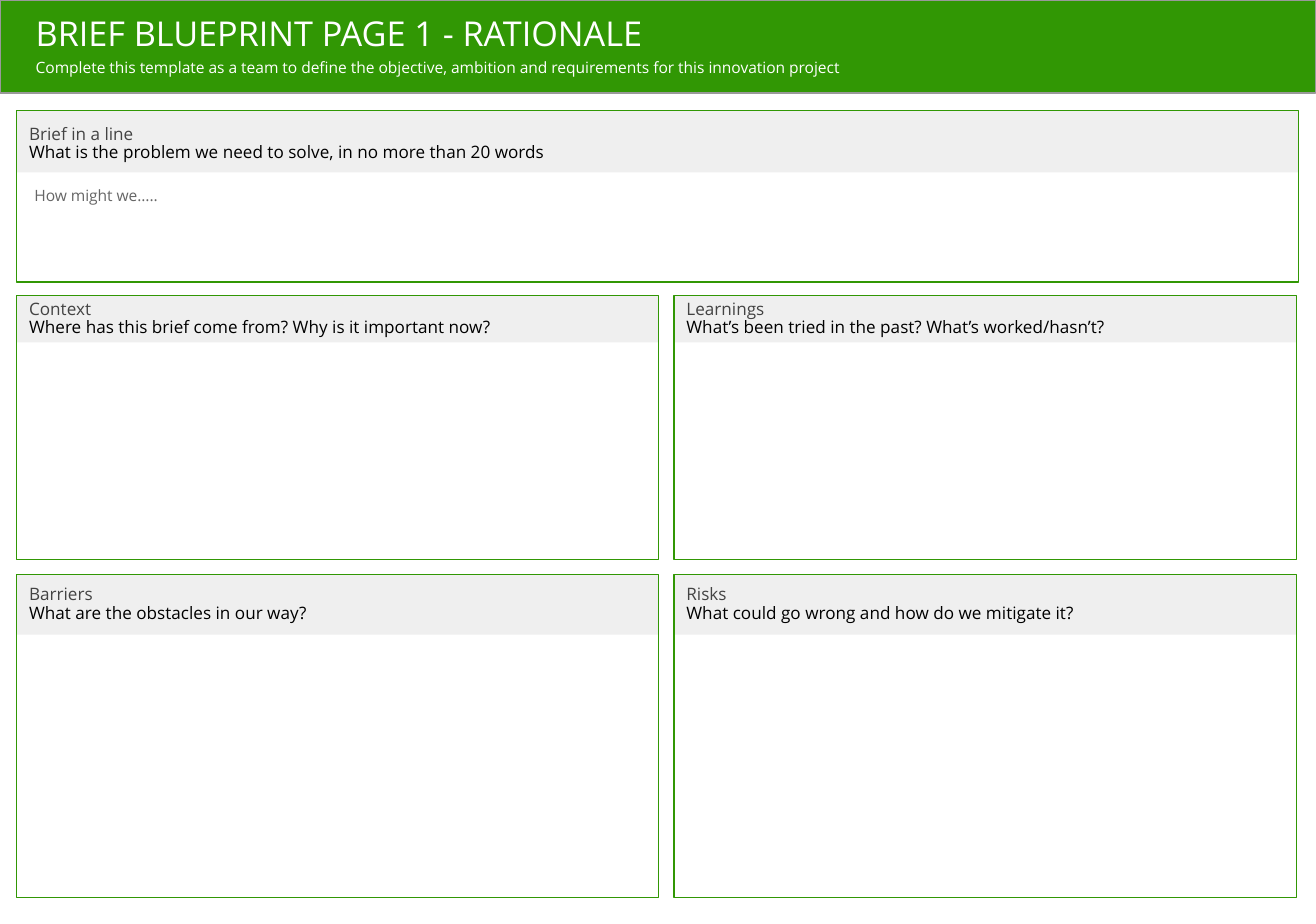
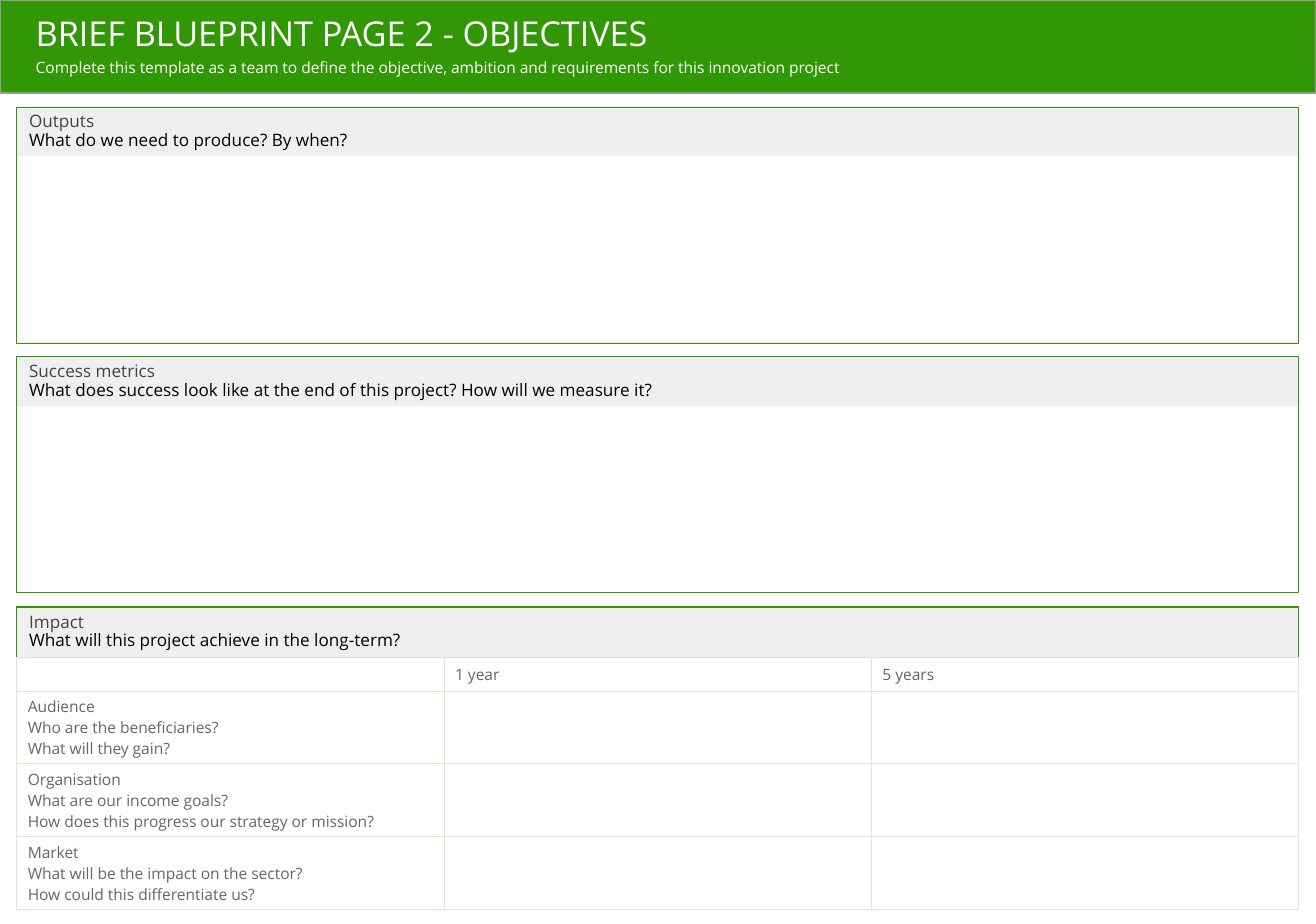
import dataclasses

import pptx
import pptx.dml.color
import pptx.enum.shapes
import pptx.enum.text
import pptx.oxml
import pptx.oxml.ns
import pptx.util

Cm = pptx.util.Cm
Pt = pptx.util.Pt
MIDDLE = pptx.enum.text.MSO_ANCHOR.MIDDLE
TOP = pptx.enum.text.MSO_ANCHOR.TOP


@dataclasses.dataclass(frozen=True)
class Theme:
    font: str = "Open Sans"
    green: str = "319704"
    pale_green: str = "D9EAD3"
    band_edge: str = "999999"
    heading_fill: str = "EFEFEF"
    white: str = "FFFFFF"
    topic: str = "434343"
    question: str = "000000"
    body: str = "666666"
    title_size: float = 22
    heading_size: float = 11
    body_size: float = 10
    line_width: float = 0.75


def rgb(value):
    return pptx.dml.color.RGBColor.from_string(value)


def write(frame, text, *, font, size, color, spacing=1.0):
    paragraph = frame.paragraphs[0]
    if paragraph.runs:
        paragraph = frame.add_paragraph()
    paragraph.alignment = pptx.enum.text.PP_ALIGN.LEFT
    paragraph.line_spacing = spacing
    run = paragraph.add_run()
    run.text = text
    run.font.name = font
    run.font.size = Pt(size)
    run.font.color.rgb = rgb(color)


class Blueprint:
    page_width, page_height = 29.85, 20.96
    band_height = 2.11
    left, full_width = 0.38, 29.08
    inset = 0.28
    subtitle = ("Complete this template as a team to define the objective, "
                "ambition and requirements for this innovation project")

    def __init__(self, theme):
        self.theme = theme
        self.deck = pptx.Presentation()
        self.deck.slide_width = Cm(self.page_width)
        self.deck.slide_height = Cm(self.page_height)
        self.slide = None

    def page(self, title):
        theme = self.theme
        self.slide = self.deck.slides.add_slide(self.deck.slide_layouts[6])
        self.box(0, 0, self.page_width, self.band_height,
                 fill=theme.green, line=theme.band_edge)
        frame = self.text_area(0.53, 0, 20.88, 2.1, self.inset)
        write(frame, title, font=theme.font, size=theme.title_size, color=theme.white)
        write(frame, self.subtitle, font=theme.font, size=theme.body_size,
              color=theme.white, spacing=1.25)

    def box(self, left, top, width, height, fill=None, line=None):
        box = self.slide.shapes.add_shape(
            pptx.enum.shapes.MSO_SHAPE.RECTANGLE,
            Cm(left), Cm(top), Cm(width), Cm(height))
        box.shadow.inherit = False
        if fill:
            box.fill.solid()
            box.fill.fore_color.rgb = rgb(fill)
        else:
            box.fill.background()
        if line:
            box.line.color.rgb = rgb(line)
            box.line.width = Pt(self.theme.line_width)
        else:
            box.line.fill.background()
        return box

    def frame_layout(self, frame, side, top, anchor):
        frame.word_wrap = True
        frame.margin_left = frame.margin_right = Cm(side)
        frame.margin_top = Cm(top)
        frame.margin_bottom = 0
        frame.vertical_anchor = anchor
        return frame

    def text_area(self, left, top, width, height, inset):
        area = self.slide.shapes.add_textbox(Cm(left), Cm(top), Cm(width), Cm(height))
        return self.frame_layout(area.text_frame, inset, inset, TOP)

    def panel(self, topic, question, left, top, width, height, heading_height,
              heading_inset=0):
        theme = self.theme
        heading = self.box(left, top, width, heading_height, fill=theme.heading_fill)
        frame = self.frame_layout(heading.text_frame, self.inset, heading_inset, MIDDLE)
        for text, color in ((topic, theme.topic), (question, theme.question)):
            write(frame, text, font=theme.font, size=theme.heading_size,
                  color=color, spacing=0.9)
        self.box(left, top, width, height, line=theme.green)

    def prompt(self, text, left, top, width, height):
        frame = self.text_area(left, top, width, height, 0.25)
        write(frame, text, font=self.theme.font, size=self.theme.body_size,
              color=self.theme.body)

    def cell_borders(self, cell):
        properties = cell._tc.get_or_add_tcPr()
        for position, side in enumerate(("lnL", "lnR", "lnT", "lnB")):
            border = pptx.oxml.parse_xml(
                f'<a:{side} {pptx.oxml.ns.nsdecls("a")} '
                f'w="{int(Pt(self.theme.line_width))}"><a:solidFill>'
                f'<a:srgbClr val="{self.theme.pale_green}"/>'
                f'</a:solidFill></a:{side}>')
            properties.insert(position, border)

    def table(self, rows, top, row_heights):
        columns = len(rows[0])
        grid = self.slide.shapes.add_table(
            len(rows), columns, Cm(self.left), Cm(top),
            Cm(self.full_width), Cm(sum(row_heights))).table
        grid.first_row = grid.horz_banding = False
        for column in grid.columns:
            column.width = Cm(self.full_width / columns)
        for row_index, (texts, height) in enumerate(zip(rows, row_heights)):
            grid.rows[row_index].height = Cm(height)
            for column_index, text in enumerate(texts):
                cell = grid.cell(row_index, column_index)
                cell.fill.background()
                cell.margin_left = cell.margin_right = Cm(0.25)
                cell.margin_top = cell.margin_bottom = 0
                cell.vertical_anchor = MIDDLE
                for line in text.split("\n"):
                    write(cell.text_frame, line, font=self.theme.font,
                          size=self.theme.body_size, color=self.theme.body)
                self.cell_borders(cell)


def rationale(blueprint):
    blueprint.page("BRIEF BLUEPRINT PAGE 1 - RATIONALE")
    blueprint.panel("Brief in a line",
                    "What is the problem we need to solve, in no more than 20 words",
                    blueprint.left, 2.51, blueprint.full_width, 3.89, 1.4,
                    heading_inset=0.1)
    blueprint.prompt("How might we…..", 0.53, 3.96, 9.25, 0.94)
    columns = ((blueprint.left, 14.55), (15.29, 14.12))
    panel_rows = (
        (6.71, 5.99, 1.06, (
            ("Context", "Where has this brief come from? Why is it important now?"),
            ("Learnings", "What’s been tried in the past? What’s worked/hasn’t?"))),
        (13.03, 7.34, 1.37, (
            ("Barriers", "What are the obstacles in our way?"),
            ("Risks", "What could go wrong and how do we mitigate it?"))),
    )
    for top, height, heading_height, topics in panel_rows:
        for (left, width), (topic, question) in zip(columns, topics):
            blueprint.panel(topic, question, left, top, width, height, heading_height)


def objectives(blueprint):
    blueprint.page("BRIEF BLUEPRINT PAGE 2 - OBJECTIVES")
    panels = (
        ("Outputs", "What do we need to produce? By when?", 2.44, 5.36, 1.09),
        ("Success metrics",
         "What does success look like at the end of this project? How will we measure it?",
         8.08, 5.36, 1.14),
        ("Impact", "What will this project achieve in the long-term?", 13.77, 6.86, 1.14),
    )
    for topic, question, top, height, heading_height in panels:
        blueprint.panel(topic, question, blueprint.left, top, blueprint.full_width,
                        height, heading_height)
    impact_rows = (
        ("", "1 year", "5 years"),
        ("Audience\nWho are the beneficiaries?\nWhat will they gain?", "", ""),
        ("Organisation\nWhat are our income goals?\n"
         "How does this progress our strategy or mission?", "", ""),
        ("Market\nWhat will be the impact on the sector?\n"
         "How could this differentiate us?", "", ""),
    )
    blueprint.table(impact_rows, 14.91, (0.77, 1.65, 1.65, 1.65))


def main():
    blueprint = Blueprint(Theme())
    rationale(blueprint)
    objectives(blueprint)
    blueprint.deck.save("out.pptx")


if __name__ == "__main__":
    main()
